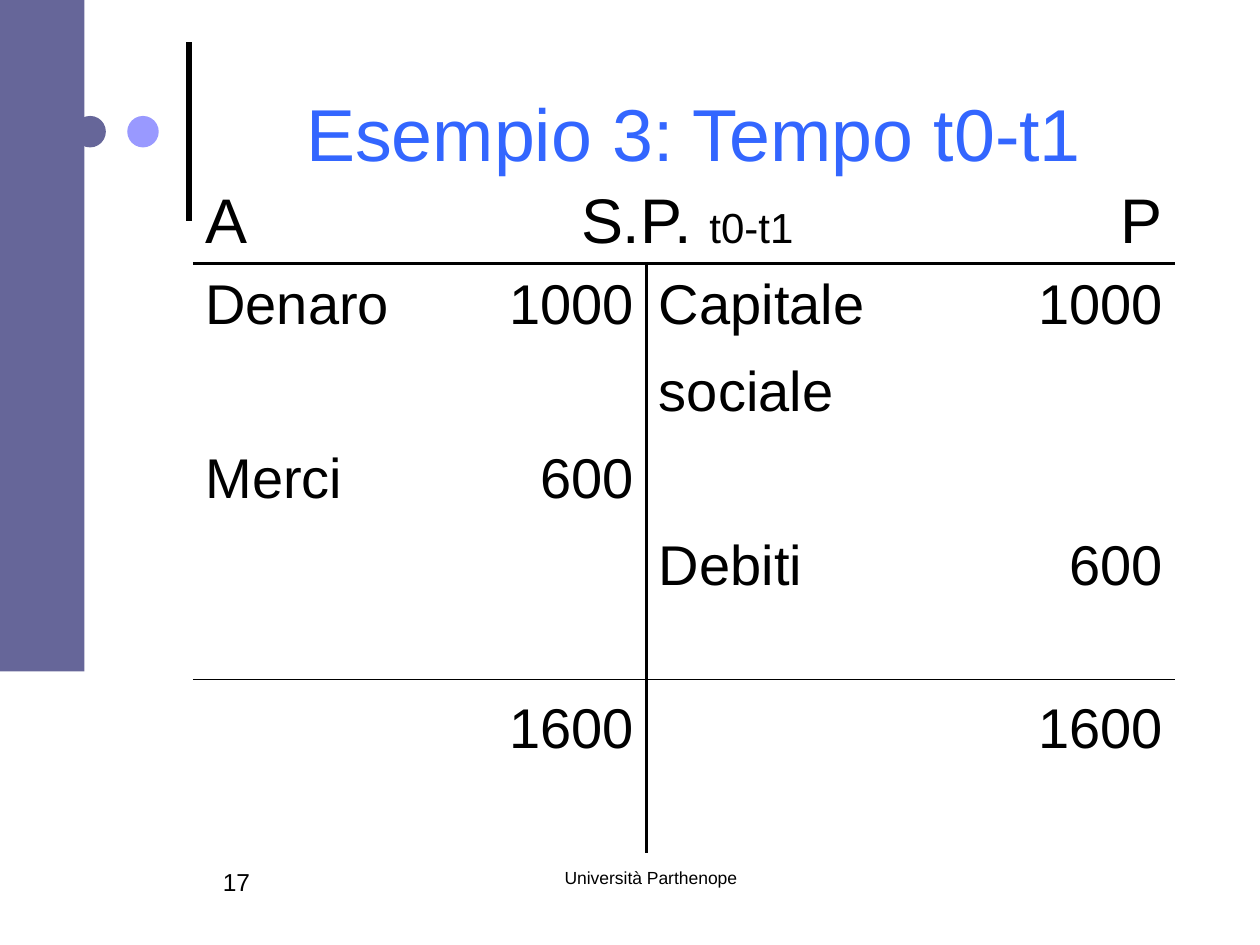
from dataclasses import dataclass

from lxml import etree
from pptx import Presentation
from pptx.dml.color import RGBColor
from pptx.enum.shapes import MSO_CONNECTOR, MSO_SHAPE
from pptx.enum.text import MSO_ANCHOR, PP_ALIGN
from pptx.oxml.ns import qn
from pptx.util import Inches, Pt

LEFT, CENTER, RIGHT = PP_ALIGN.LEFT, PP_ALIGN.CENTER, PP_ALIGN.RIGHT
TOP, MIDDLE, BOTTOM = MSO_ANCHOR.TOP, MSO_ANCHOR.MIDDLE, MSO_ANCHOR.BOTTOM
RECTANGLE, OVAL = MSO_SHAPE.RECTANGLE, MSO_SHAPE.OVAL
STRAIGHT = MSO_CONNECTOR.STRAIGHT


@dataclass(frozen=True)
class Theme:
    font: str = "Arial"
    ink: str = "000000"
    heading: str = "3366FF"
    band: str = "666699"
    accent: str = "9999FF"
    title_size: int = 42
    header_size: int = 36
    entry_size: int = 32
    period_size: int = 24
    number_size: int = 14
    footer_size: int = 10


THEME = Theme()


def write(frame, runs, size, color=THEME.ink, align=LEFT, hanging=0):
    """Fill a frame with one paragraph; runs is text or (text, size) pairs."""
    paragraph = frame.paragraphs[0]
    paragraph.alignment = align
    if hanging:
        properties = paragraph._p.get_or_add_pPr()
        properties.set("marL", str(Inches(hanging)))
        properties.set("indent", str(-Inches(hanging)))
    for text, run_size in [(runs, size)] if isinstance(runs, str) else runs:
        run = paragraph.add_run()
        run.text = text
        run.font.name = THEME.font
        run.font.size = Pt(run_size)
        run.font.color.rgb = RGBColor.from_string(color)


def set_borders(cell, widths):
    """Draw the sides named in widths (L, R, T, B) and clear the others."""
    properties = cell._tc.get_or_add_tcPr()
    for position, side in enumerate("LRTB"):
        width = widths.get(side, 0)
        line = etree.Element(qn(f"a:ln{side}"), w=str(Pt(width)))
        if width:
            fill = etree.SubElement(line, qn("a:solidFill"))
            etree.SubElement(fill, qn("a:srgbClr"), val=THEME.ink)
        else:
            etree.SubElement(line, qn("a:noFill"))
        properties.insert(position, line)


class SlideBuilder:
    def __init__(self, theme, slide):
        self.theme = theme
        self.slide = slide

    def title(self, text, box):
        heading = self.slide.shapes.title
        heading.left, heading.top, heading.width, heading.height = map(Inches, box)
        heading.text_frame.vertical_anchor = MIDDLE
        write(heading.text_frame, text, self.theme.title_size,
              color=self.theme.heading, align=CENTER)

    def shape(self, kind, box, color):
        ornament = self.slide.shapes.add_shape(kind, *map(Inches, box))
        ornament.shadow.inherit = False
        ornament.fill.solid()
        ornament.fill.fore_color.rgb = RGBColor.from_string(color)
        ornament.line.fill.background()

    def line(self, start, end, width):
        rule = self.slide.shapes.add_connector(STRAIGHT, *map(Inches, start + end))
        rule.line.color.rgb = RGBColor.from_string(self.theme.ink)
        rule.line.width = Pt(width)
        etree.SubElement(rule._element.spPr, qn("a:effectLst"))

    def text(self, text, box, size, align=LEFT):
        frame = self.slide.shapes.add_textbox(*map(Inches, box)).text_frame
        frame.word_wrap = True
        frame.vertical_anchor = TOP
        write(frame, text, size, align=align)

    def t_account(self, rows, origin, widths, heights, rules):
        """Two-sided account; rules maps a row to the line width below it."""
        box = origin + (sum(widths), sum(heights))
        table = self.slide.shapes.add_table(
            len(rows), len(widths), *map(Inches, box)).table
        table.first_row = table.horz_banding = False
        for column, width in zip(table.columns, widths):
            column.width = Inches(width)
        for row, height in zip(table.rows, heights):
            row.height = Inches(height)
        table.cell(0, 1).merge(table.cell(0, 2))

        for r, entries in enumerate(rows):
            size = self.theme.entry_size if r else self.theme.header_size
            for c, entry in enumerate(entries):
                cell = table.cell(r, c)
                cell.fill.background()
                borders = {"T": rules.get(r - 1, 0), "B": rules.get(r, 0)}
                if r and c in (1, 2):
                    borders["R" if c == 1 else "L"] = 2
                set_borders(cell, borders)
                cell.vertical_anchor = BOTTOM
                if entry:
                    align = RIGHT if c % 2 else LEFT
                    if r == 0 and c == 1:
                        align = CENTER
                    write(cell.text_frame, entry, size, align=align, hanging=0.38)


def main():
    deck = Presentation()
    deck.slide_width, deck.slide_height = Inches(10), Inches(7.5)
    title_only = deck.slide_layouts[5]
    page = SlideBuilder(THEME, deck.slides.add_slide(title_only))

    # Side decoration
    page.line((1.5, 1.75), (1.5, 0.33), 3)
    for left, color in ((0.59, THEME.band), (1.01, THEME.accent)):
        page.shape(OVAL, (left, 0.92, 0.25, 0.25), color)
    page.shape(RECTANGLE, (0, 0, 0.67, 5.33), THEME.band)

    # Footer and page number
    page.text("Università Parthenope", (3.58, 6.83, 3.17, 0.5),
              THEME.footer_size, align=CENTER)
    page.text("17", (1.67, 6.83, 1.42, 0.5), THEME.number_size)

    # Heading
    page.title("Esempio 3: Tempo t0-t1", (1.67, 0.21, 7.67, 1.67))

    # Balance sheet: assets on the left, liabilities on the right
    balance_title = [("S.P. ", THEME.header_size), ("t0-t1", THEME.period_size)]
    balance_sheet = [
        ("A", balance_title, "", "P"),
        ("Denaro", "1000", "Capitale", "1000"),
        ("", "", "sociale", ""),
        ("Merci", "600", "", ""),
        ("", "", "Debiti", "600"),
        ("", "", "", ""),
        ("", "1600", "", "1600"),
        ("", "", "", ""),
    ]
    page.t_account(
        balance_sheet,
        origin=(1.53, 1.39),
        widths=(1.99, 1.61, 2.26, 1.94),
        heights=(0.65, 0.6, 0.69, 0.69, 0.69, 0.6, 0.69, 0.69),
        rules={0: 2, 5: 1},
    )

    deck.save("out.pptx")


if __name__ == "__main__":
    main()
